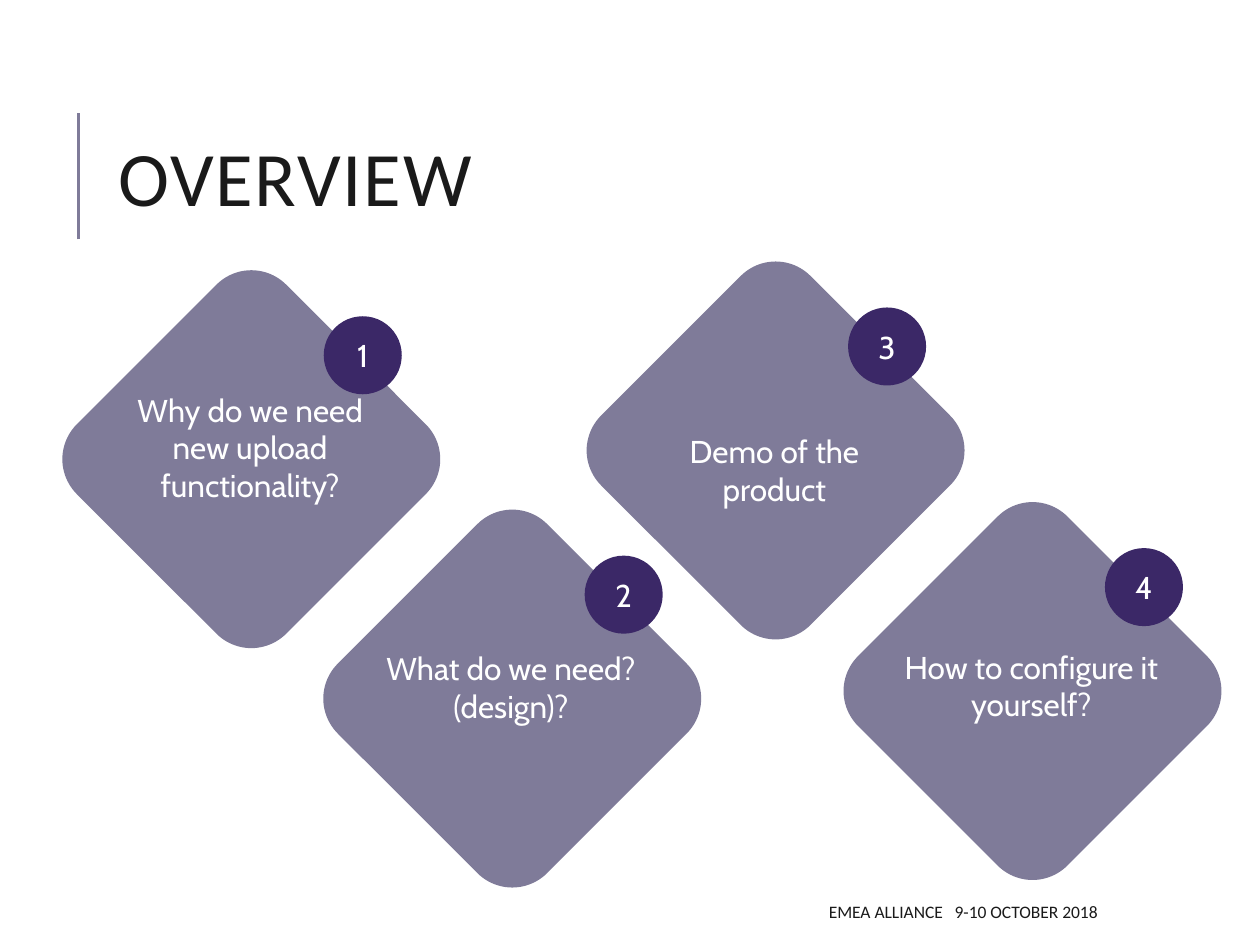
from pptx import Presentation
from pptx.dml.color import RGBColor
from pptx.enum.shapes import MSO_CONNECTOR, MSO_SHAPE
from pptx.enum.text import MSO_ANCHOR, MSO_AUTO_SIZE, PP_ALIGN
from pptx.oxml.ns import qn
from pptx.util import Pt

DIAMOND, CIRCLE = MSO_SHAPE.ROUNDED_RECTANGLE, MSO_SHAPE.OVAL
LEFT, CENTER, RIGHT = PP_ALIGN.LEFT, PP_ALIGN.CENTER, PP_ALIGN.RIGHT
TOP, MIDDLE = MSO_ANCHOR.TOP, MSO_ANCHOR.MIDDLE

MAUVE = RGBColor(0x7F, 0x7B, 0x99)
PURPLE = RGBColor(0x3B, 0x28, 0x67)
INK = RGBColor(0x1A, 0x1A, 0x1A)
WHITE = RGBColor(0xFF, 0xFF, 0xFF)

# Content: topic, left and top of its diamond, top and height of its caption
TITLE = "OVERVIEW"
TOPICS = [
    ("Why do we need new upload functionality?", 59, 177.8, 219.6, 72.7),
    ("What do we need? (design)?", 208.1, 314.6, 367.2, 50.9),
    ("Demo of the product", 358.6, 172.8, 243.4, 29.1),
    ("How to configure it yourself?", 505.4, 310.3, 366.5, 50.9),
]
FOOTER = ("EMEA ALLIANCE", " ", "9-10 OCTOBER 2018")

# Measures shared by all topics
DIAMOND_SIZE = 169.2
BADGE_SIZE = 44.6
BADGE_DX, BADGE_DY = 126, 2.9
CAPTION_DX, CAPTION_WIDTH = 2.9, 162


def box(left, top, width, height):
    return Pt(left), Pt(top), Pt(width), Pt(height)


def format_text(frame, font_name, size, color, align, anchor=MIDDLE):
    frame.word_wrap = True
    frame.vertical_anchor = anchor
    for paragraph in frame.paragraphs:
        paragraph.alignment = align
        for run in paragraph.runs:
            run.font.name = font_name
            run.font.size = Pt(size)
            run.font.color.rgb = color


def set_spacing(run, points):
    run.font._element.set("spc", str(round(points * 100)))


def add_solid(slide, kind, color, *place):
    solid = slide.shapes.add_shape(kind, *box(*place))
    solid.shadow.inherit = False
    solid.fill.solid()
    solid.fill.fore_color.rgb = color
    solid.line.fill.background()
    return solid


def add_topic(slide, number, topic, left, top, caption_top, caption_height):
    diamond = add_solid(slide, DIAMOND, MAUVE, left, top, DIAMOND_SIZE, DIAMOND_SIZE)
    diamond.rotation = 45

    badge = add_solid(slide, CIRCLE, PURPLE, left + BADGE_DX, top + BADGE_DY,
                      BADGE_SIZE, BADGE_SIZE)
    badge.text_frame.text = str(number)
    format_text(badge.text_frame, "Cabin", 18, WHITE, CENTER)

    caption = slide.shapes.add_textbox(
        *box(left + CAPTION_DX, caption_top, CAPTION_WIDTH, caption_height))
    caption.text_frame.text = topic
    format_text(caption.text_frame, "Cabin", 18, WHITE, CENTER, TOP)
    caption.text_frame.auto_size = MSO_AUTO_SIZE.SHAPE_TO_FIT_TEXT


def main():
    deck = Presentation()
    deck.slide_width, deck.slide_height = Pt(720), Pt(540)
    slide = deck.slides.add_slide(deck.slide_layouts[5])

    # Title with the rule at its left
    rule = slide.shapes.add_connector(
        MSO_CONNECTOR.STRAIGHT, Pt(44.8), Pt(136.8), Pt(44.8), Pt(64.8))
    rule.line.color.rgb = MAUVE
    rule.line.width = Pt(1.5)
    properties = rule._element.spPr
    properties.append(properties.makeelement(qn("a:effectLst"), {}))

    title = slide.shapes.title
    title.left, title.top, title.width, title.height = box(60.5, 46.1, 573.8, 118.1)
    title.text_frame.text = TITLE
    format_text(title.text_frame, "Calibri", 44, INK, LEFT)
    heading = title.text_frame.paragraphs[0]
    heading.line_spacing = 0.8
    set_spacing(heading.runs[0], 1)

    # Numbered topics
    for number, topic in enumerate(TOPICS, start=1):
        add_topic(slide, number, *topic)

    # Footer: the gap between event and date is a widened space
    footer = slide.shapes.add_textbox(*box(285.8, 509.8, 348.5, 21.6))
    footer_line = footer.text_frame.paragraphs[0]
    for part in FOOTER:
        footer_line.add_run().text = part
    format_text(footer.text_frame, "Calibri", 10, INK, RIGHT)
    set_spacing(footer_line.runs[1], 4.5)

    deck.save("out.pptx")


if __name__ == "__main__":
    main()
